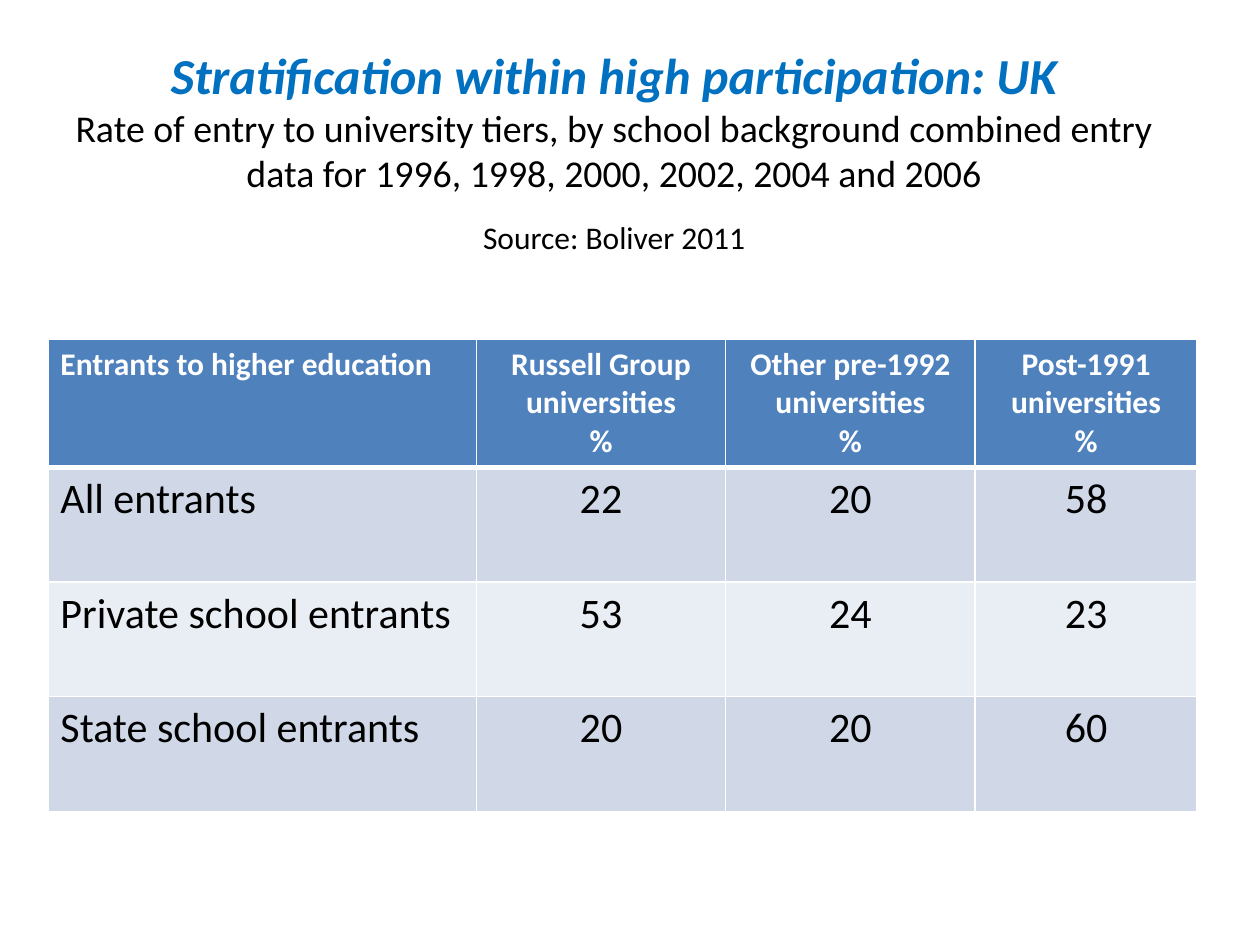
from lxml import etree
from pptx import Presentation, util as u
from pptx.dml.color import RGBColor
from pptx.enum import text as t
from pptx.oxml import ns

HEADS = ["Entrants to higher education", "Russell Group universities\n%",
         "Other pre-1992 universities\n%", "Post-1991 universities\n%"]
ROWS = [["All entrants", 22, 20, 58],
        ["Private school entrants", 53, 24, 23],
        ["State school entrants", 20, 20, 60]]
COLS = [3.4, 1.98, 1.98, 1.76]
HIGHS = [1.02] + [0.91] * len(ROWS)


def tint(code):
    """Turn a hex string into a colour."""
    return RGBColor.from_string(code)


def write(para, words, size, color="000000", bold=False, italic=False,
          center=True, gap=0):
    """Put formatted words into a paragraph."""
    para.alignment = t.PP_ALIGN.CENTER if center else t.PP_ALIGN.LEFT
    if gap:
        para.space_before = u.Pt(gap)
    run = para.add_run()
    run.text = words
    font = run.font
    font.name, font.size = "Calibri", u.Pt(size)
    font.bold, font.italic = bold, italic
    font.color.rgb = tint(color)


def edge(cell, low):
    """Draw white borders round a cell, with the given bottom width."""
    props = cell._tc.get_or_add_tcPr()
    for spot, (side, wide) in enumerate(
            [("lnL", 1), ("lnR", 1), ("lnT", 1), ("lnB", low)]):
        line = etree.Element(ns.qn("a:" + side), w=str(u.Pt(wide)))
        fill = etree.SubElement(line, ns.qn("a:solidFill"))
        etree.SubElement(fill, ns.qn("a:srgbClr"), val="FFFFFF")
        props.insert(spot, line)


def heading(slide, box):
    """Place the title, subtitle and source."""
    frame = slide.shapes.add_textbox(*map(u.Inches, box)).text_frame
    frame.word_wrap = True
    frame.vertical_anchor = t.MSO_ANCHOR.TOP
    write(frame.paragraphs[0], "Stratification within high participation: UK",
          28.8, color="0070C0", bold=True, italic=True)
    write(frame.add_paragraph(),
          "Rate of entry to university tiers, by school background combined "
          "entry data for 1996, 1998, 2000, 2002, 2004 and 2006", 21.6)
    write(frame.add_paragraph(), "Source: Boliver 2011", 18, gap=13)


def entry(slide, box):
    """Place the table of entry rates."""
    grid = slide.shapes.add_table(len(HIGHS), len(COLS),
                                  *map(u.Inches, box)).table
    for col, wide in zip(grid.columns, COLS):
        col.width = u.Inches(wide)
    for row, high in zip(grid.rows, HIGHS):
        row.height = u.Inches(high)
    for r, row in enumerate([HEADS] + ROWS):
        head = r == 0
        shade = "4F81BD" if head else ("E9EDF4", "D0D8E8")[r % 2]
        for c, value in enumerate(row):
            cell = grid.cell(r, c)
            cell.fill.solid()
            cell.fill.fore_color.rgb = tint(shade)
            edge(cell, 3 if head else 1)
            frame = cell.text_frame
            for n, words in enumerate(str(value).split("\n")):
                para = frame.add_paragraph() if n else frame.paragraphs[0]
                write(para, words, 18 if head else 24,
                      color="FFFFFF" if head else "000000",
                      bold=head, center=c > 0)


def main():
    """Build and save the slide."""
    deck = Presentation()
    deck.slide_width, deck.slide_height = u.Inches(10), u.Inches(7.5)
    slide = deck.slides.add_slide(deck.slide_layouts[6])
    heading(slide, (0.25, 0.3, 9.25, 1.76))
    entry(slide, (0.38, 2.69, sum(COLS), sum(HIGHS)))
    deck.save("out.pptx")


if __name__ == "__main__":
    main()
